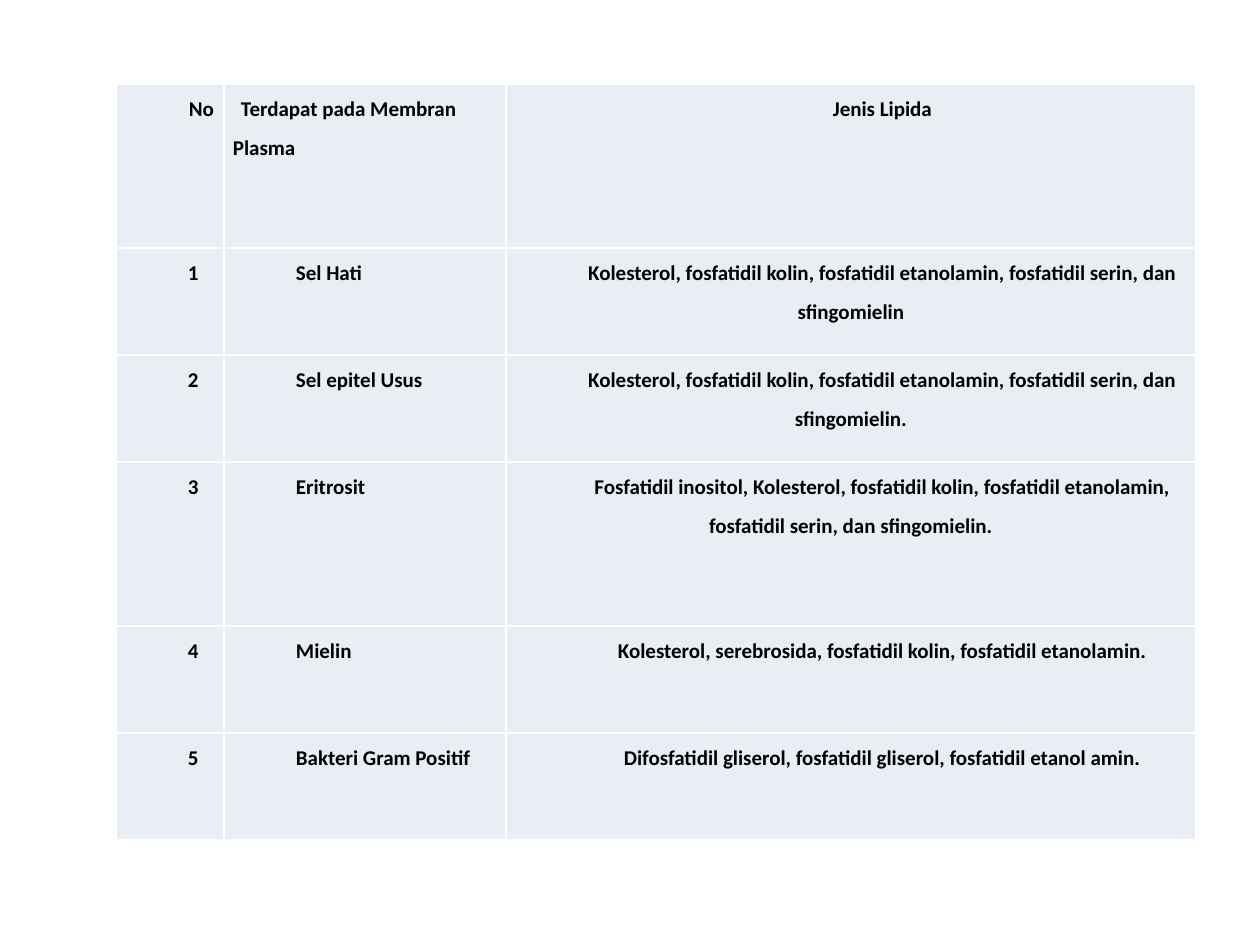
from dataclasses import dataclass

from lxml.etree import SubElement
from pptx import Presentation
from pptx.dml.color import RGBColor
from pptx.enum.text import PP_ALIGN
from pptx.oxml.ns import qn
from pptx.table import _Cell
from pptx.util import Emu, Pt

EMU_PER_PX = 914400 / 126
BLANK_LAYOUT = 6
CELL_FILL = "E9EDF4"
BORDER_COLOR = "FFFFFF"
BORDER_WIDTH = Pt(1)
MARGINS = {"margin_left": 9, "margin_right": 9, "margin_top": 0, "margin_bottom": 0}
FONT_FORMAT = {"name": "Calibri", "size": Pt(12), "bold": True}


@dataclass(frozen=True)
class CellStyle:
    alignment: PP_ALIGN
    first_line_indent: int = 63


NUMBER = CellStyle(PP_ALIGN.JUSTIFY)
MEMBRANE = CellStyle(PP_ALIGN.LEFT)
LIPID = CellStyle(PP_ALIGN.CENTER)
HEADER_STYLES = (LIPID, CellStyle(PP_ALIGN.LEFT, 8), LIPID)
BODY_STYLES = (NUMBER, MEMBRANE, LIPID)


@dataclass(frozen=True)
class LipidRow:
    height: int
    texts: tuple[str, str, str]
    styles: tuple[CellStyle, ...] = BODY_STYLES


TABLE_LEFT, TABLE_TOP = 116, 84
COLUMN_WIDTHS = (108, 282, 690)
TALL, SHORT = 164, 107
ROWS = (
    LipidRow(TALL, ("No", "Terdapat pada Membran Plasma", "Jenis Lipida"), HEADER_STYLES),
    LipidRow(SHORT, ("1", "Sel Hati", "Kolesterol, fosfatidil kolin, fosfatidil etanolamin, "
                     "fosfatidil serin, dan sfingomielin")),
    LipidRow(SHORT, ("2", "Sel epitel Usus", "Kolesterol, fosfatidil kolin, fosfatidil etanolamin, "
                     "fosfatidil serin, dan sfingomielin.")),
    LipidRow(TALL, ("3", "Eritrosit", "Fosfatidil inositol, Kolesterol, fosfatidil kolin, "
                    "fosfatidil etanolamin, fosfatidil serin, dan sfingomielin.")),
    LipidRow(SHORT, ("4", "Mielin",
                     "Kolesterol, serebrosida, fosfatidil kolin, fosfatidil etanolamin.")),
    LipidRow(SHORT, ("5", "Bakteri Gram Positif",
                     "Difosfatidil gliserol, fosfatidil gliserol, fosfatidil etanol amin.")),
)


def px(length: int) -> Emu:
    return Emu(round(length * EMU_PER_PX))


def color(hex_value: str) -> RGBColor:
    return RGBColor.from_string(hex_value)


def add_borders(cell: _Cell) -> None:
    """Put the four border lines before the fill, as the schema requires."""
    properties = cell._tc.get_or_add_tcPr()
    for position, side in enumerate(("lnL", "lnR", "lnT", "lnB")):
        line = SubElement(properties, qn(f"a:{side}"), w=str(BORDER_WIDTH))
        line_fill = SubElement(line, qn("a:solidFill"))
        SubElement(line_fill, qn("a:srgbClr"), val=BORDER_COLOR)
        properties.insert(position, line)


def fill_cell(cell: _Cell, text: str, style: CellStyle) -> None:
    for name, length in MARGINS.items():
        setattr(cell, name, px(length))
    cell.fill.solid()
    cell.fill.fore_color.rgb = color(CELL_FILL)
    add_borders(cell)

    # Text with a first-line indent
    paragraph = cell.text_frame.paragraphs[0]
    paragraph.alignment = style.alignment
    paragraph.line_spacing = 1.5
    paragraph_properties = paragraph._p.get_or_add_pPr()
    paragraph_properties.set("marL", "0")
    paragraph_properties.set("indent", str(px(style.first_line_indent)))
    run = paragraph.add_run()
    run.text = text
    for name, value in FONT_FORMAT.items():
        setattr(run.font, name, value)
    run.font.color.rgb = color("000000")


def main() -> None:
    presentation = Presentation()
    presentation.slide_width, presentation.slide_height = px(1260), px(945)
    slide = presentation.slides.add_slide(presentation.slide_layouts[BLANK_LAYOUT])

    # Table grid
    table = slide.shapes.add_table(
        len(ROWS), len(COLUMN_WIDTHS), px(TABLE_LEFT), px(TABLE_TOP),
        px(sum(COLUMN_WIDTHS)), px(sum(row.height for row in ROWS)),
    ).table
    for column, width in zip(table.columns, COLUMN_WIDTHS):
        column.width = px(width)

    # Header and lipid rows
    for table_row, row in zip(table.rows, ROWS):
        table_row.height = px(row.height)
        for cell, text, style in zip(table_row.cells, row.texts, row.styles):
            fill_cell(cell, text, style)

    presentation.save("out.pptx")


if __name__ == "__main__":
    main()
